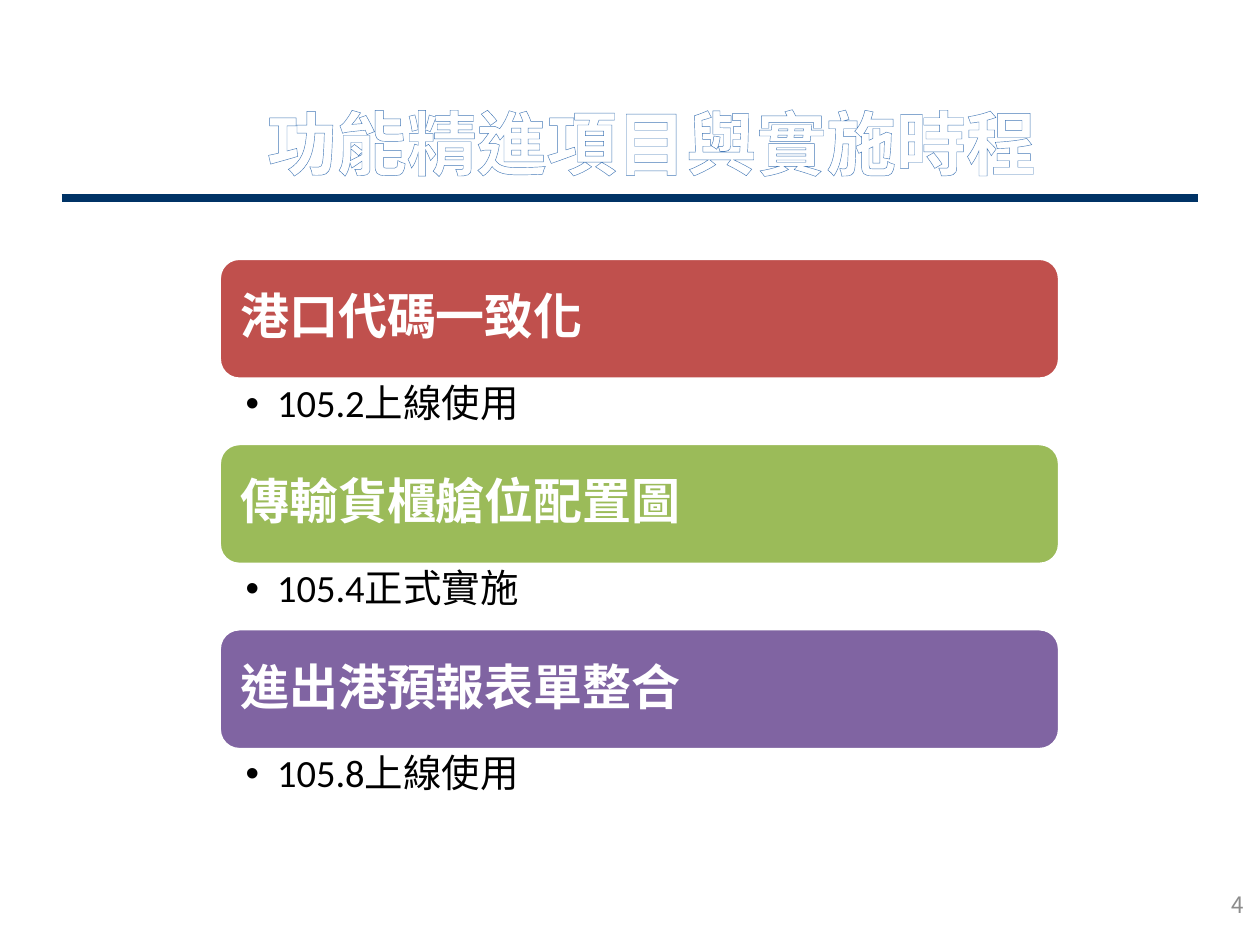
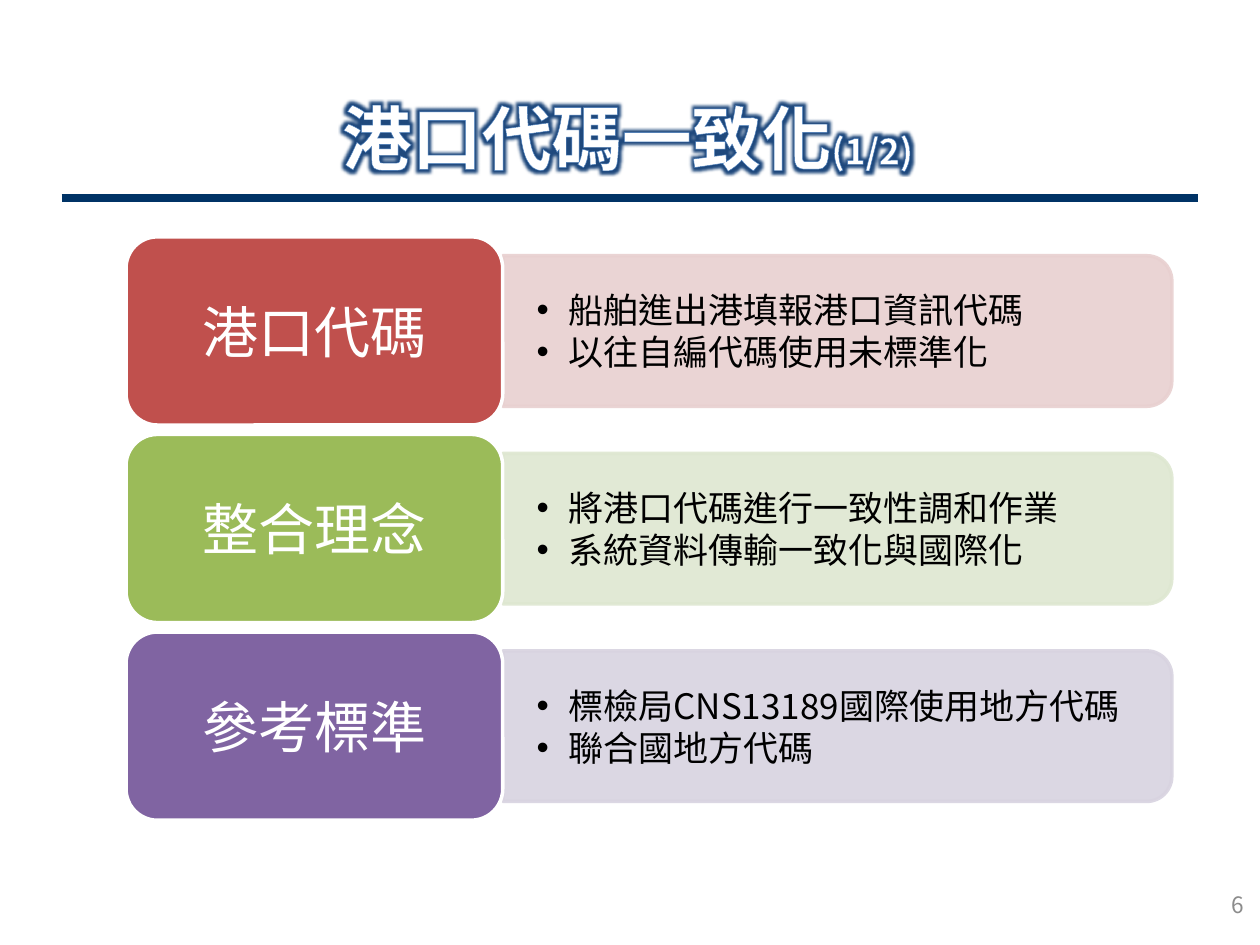
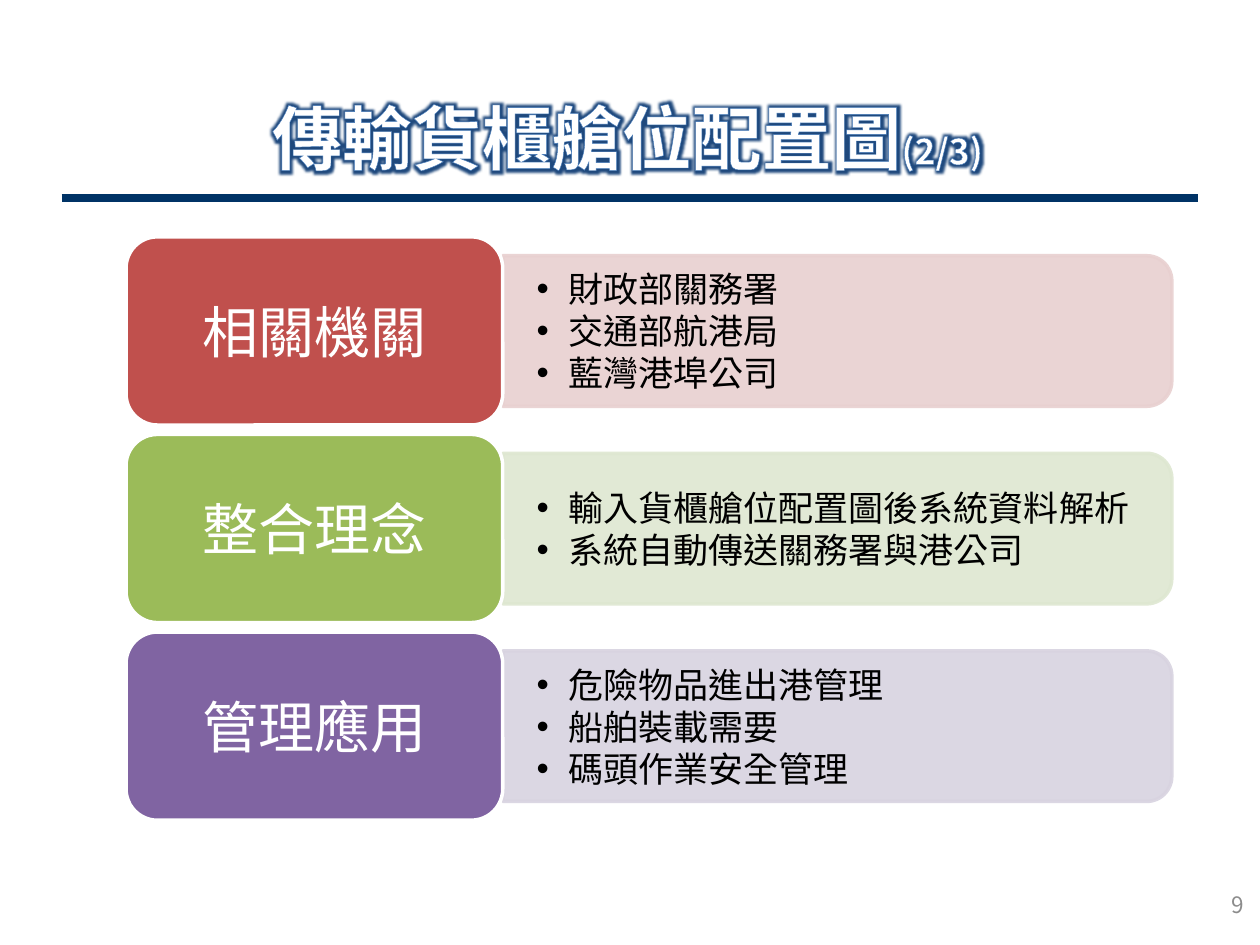
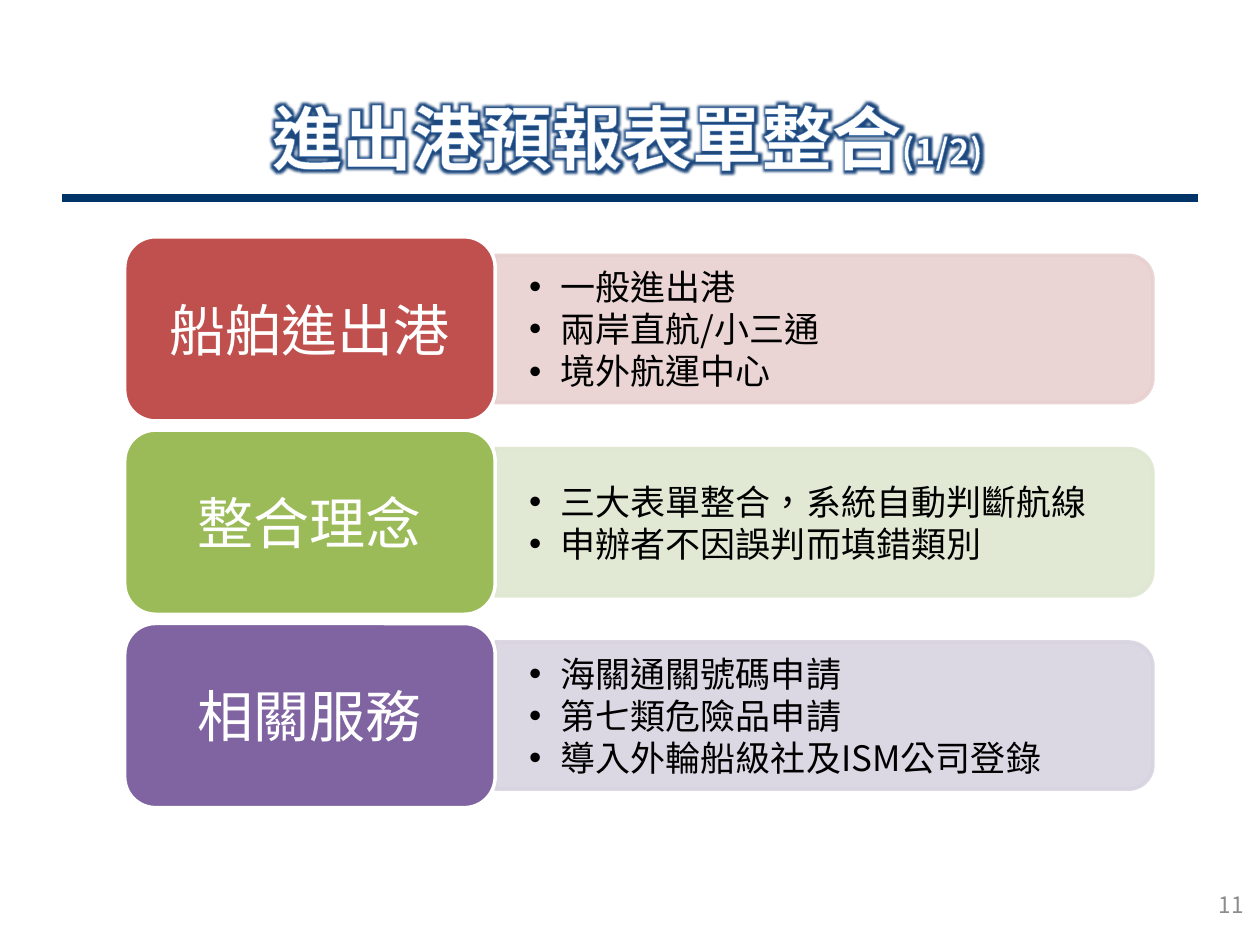
from lxml.etree import SubElement
from pptx import Presentation
from pptx.dml.color import RGBColor
from pptx.enum.shapes import MSO_CONNECTOR, MSO_SHAPE
from pptx.enum.text import MSO_ANCHOR, MSO_AUTO_SIZE, PP_ALIGN
from pptx.oxml import parse_xml
from pptx.oxml.ns import nsdecls, qn
from pptx.util import Pt

PX = 9144
CJK_FONT = "Noto Sans CJK SC"
LATIN_FONT = "Calibri"

WHITE = RGBColor(0xFF, 0xFF, 0xFF)
BLACK = RGBColor(0x00, 0x00, 0x00)
GRAY = RGBColor(0x8C, 0x8C, 0x8C)
NAVY = RGBColor(0x00, 0x33, 0x66)
OUTLINE_BLUE = RGBColor(0x46, 0x7A, 0xB8)
GLOW_BLUE = RGBColor(0x1F, 0x49, 0x7D)
RED = RGBColor(0xC0, 0x50, 0x4D)
GREEN = RGBColor(0x9B, 0xBB, 0x59)
PURPLE = RGBColor(0x80, 0x64, 0xA2)
ACCENTS = [RED, GREEN, PURPLE]
TINTS = [RGBColor(0xE8, 0xD0, 0xD0), RGBColor(0xDE, 0xE7, 0xD1), RGBColor(0xD8, 0xD3, 0xE0)]

SCHEDULE = [
    ("港口代碼一致化", "105.2上線使用"),
    ("傳輸貨櫃艙位配置圖", "105.4正式實施"),
    ("進出港預報表單整合", "105.8上線使用"),
]
PORT_CODES = [
    ("港口代碼", ["船舶進出港填報港口資訊代碼", "以往自編代碼使用未標準化"]),
    ("整合理念", ["將港口代碼進行一致性調和作業", "系統資料傳輸一致化與國際化"]),
    ("參考標準", ["標檢局CNS13189國際使用地方代碼", "聯合國地方代碼"]),
]
BAY_PLANS = [
    ("相關機關", ["財政部關務署", "交通部航港局", "藍灣港埠公司"]),
    ("整合理念", ["輸入貨櫃艙位配置圖後系統資料解析", "系統自動傳送關務署與港公司"]),
    ("管理應用", ["危險物品進出港管理", "船舶裝載需要", "碼頭作業安全管理"]),
]
FORECAST_FORMS = [
    ("船舶進出港", ["一般進出港", "兩岸直航/小三通", "境外航運中心"]),
    ("整合理念", ["三大表單整合，系統自動判斷航線", "申辦者不因誤判而填錯類別"]),
    ("相關服務", ["海關通關號碼申請", "第七類危險品申請", "導入外輪船級社及ISM公司登錄"]),
]


def emu(*lengths):
    return [round(length * PX) for length in lengths]


def style_run(run, size, color, bold=False, latin=CJK_FONT):
    run.font.size = Pt(size)
    run.font.bold = bold
    run.font.color.rgb = color
    run.font.name = latin
    properties = run.font._element
    properties.set("lang", "zh-TW")
    SubElement(properties, qn("a:ea")).set("typeface", CJK_FONT)


def set_frame(frame, insets, anchor):
    frame.word_wrap = True
    frame.auto_size = MSO_AUTO_SIZE.NONE
    frame.vertical_anchor = anchor
    (frame.margin_left, frame.margin_top,
     frame.margin_right, frame.margin_bottom) = emu(*insets)


def add_text(slide, box, insets, anchor):
    frame = slide.shapes.add_textbox(*emu(*box)).text_frame
    set_frame(frame, insets, anchor)
    return frame


def add_bullets(frame, items, size, latin, line_spacing):
    frame.text = "\n".join(items)
    for paragraph in frame.paragraphs:
        paragraph.level = 1
        paragraph.line_spacing = line_spacing
        properties = paragraph._p.get_or_add_pPr()
        properties.set("marL", str(25 * PX))
        properties.set("indent", str(-25 * PX))
        SubElement(properties, qn("a:buFont")).set("typeface", "Arial")
        SubElement(properties, qn("a:buChar")).set("char", "•")
        style_run(paragraph.runs[0], size, BLACK, latin=latin)


def add_block(slide, kind, box, fill, line):
    block = slide.shapes.add_shape(kind, *emu(*box))
    block.shadow.inherit = False
    block.fill.solid()
    block.fill.fore_color.rgb = fill
    block.line.color.rgb = line
    block.line.width = Pt(2)
    return block


def add_label(slide, box, text, accent, size, insets, align, line_spacing, bold=False):
    label = add_block(slide, MSO_SHAPE.ROUNDED_RECTANGLE, box, accent, WHITE)
    set_frame(label.text_frame, insets, MSO_ANCHOR.MIDDLE)
    label.text_frame.text = text
    paragraph = label.text_frame.paragraphs[0]
    paragraph.alignment = align
    paragraph.line_spacing = line_spacing
    style_run(paragraph.runs[0], size, WHITE, bold)


def add_panel(slide, left, top, width, height, items, tint):
    frame_left = left + (width - height) / 2
    frame_top = top + (height - width) / 2
    panel = add_block(slide, MSO_SHAPE.ROUND_2_SAME_RECTANGLE,
                      (frame_left, frame_top, height, width), tint, tint)
    panel.rotation = 90
    for color in panel._element.spPr.iter(qn("a:srgbClr")):
        SubElement(color, qn("a:alpha")).set("val", "90000")
    frame = add_text(slide, (left, top + 6, width - 5, height - 12),
                     (27, 14, 27, 14), MSO_ANCHOR.MIDDLE)
    add_bullets(frame, items, 20, CJK_FONT, Pt(24))


def decorate_title_run(run, glow):
    properties = run.font._element
    properties.insert(0, parse_xml(
        f'<a:ln {nsdecls("a")} w="10541"><a:solidFill>'
        f'<a:srgbClr val="{OUTLINE_BLUE}"/></a:solidFill></a:ln>'))
    if glow:
        properties.insert(2, parse_xml(
            f'<a:effectLst {nsdecls("a")}><a:glow rad="88900">'
            f'<a:srgbClr val="{GLOW_BLUE}"/></a:glow></a:effectLst>'))


def add_title(slide, box, text, part, anchor):
    title = slide.shapes.title
    title.left, title.top, title.width, title.height = emu(*box)
    set_frame(title.text_frame, (10, 5, 10, 5), anchor)
    title.text_frame.text = text
    paragraph = title.text_frame.paragraphs[0]
    paragraph.alignment = PP_ALIGN.CENTER
    paragraph.line_spacing = Pt(48)
    if part:
        paragraph.add_run().text = part
    for run, size in zip(paragraph.runs, (40, 20)):
        style_run(run, size, WHITE, bold=True)
        decorate_title_run(run, glow=bool(part))


def add_page(deck, number):
    slide = deck.slides.add_slide(deck.slide_layouts[5])
    rule = slide.shapes.add_connector(MSO_CONNECTOR.STRAIGHT, *emu(49, 157, 951, 157))
    rule.line.color.rgb = NAVY
    rule.line.width = Pt(4.5)
    SubElement(rule._element.spPr, qn("a:effectLst"))
    footer = add_text(slide, (764, 698, 233, 40), (10, 5, 10, 5), MSO_ANCHOR.MIDDLE)
    footer.text = str(number)
    footer.paragraphs[0].alignment = PP_ALIGN.RIGHT
    style_run(footer.paragraphs[0].runs[0], 12.9, GRAY)
    return slide


def add_schedule(slide):
    left, top, width, label_height, date_height = 174, 205, 667, 96, 51
    for index, ((name, date), accent) in enumerate(zip(SCHEDULE, ACCENTS)):
        label_top = top + index * (label_height + date_height)
        add_label(slide, (left, label_top, width, label_height), name, accent, 28,
                  (12, 12, 12, 12), PP_ALIGN.LEFT, 0.9, bold=True)
        frame = add_text(slide, (left, label_top + label_height, width, date_height),
                         (21, 4, 22, 4), MSO_ANCHOR.TOP)
        add_bullets(frame, [date], 22, LATIN_FONT, 0.9)


def add_topics(slide, topics, left, width, height):
    top = 188
    label_width = round(width * 0.36)
    label_height = height / 3.1
    panel_height = label_height * 0.8
    for index, ((name, items), accent, tint) in enumerate(zip(topics, ACCENTS, TINTS)):
        label_top = top + index * label_height * 1.05
        add_panel(slide, left + label_width, label_top + label_height * 0.1,
                  width - label_width, panel_height, items, tint)
        add_label(slide, (left, label_top, label_width, label_height), name, accent, 32,
                  (13, 7, 13, 7), PP_ALIGN.CENTER, 1.0)


def main():
    deck = Presentation()
    deck.slide_width, deck.slide_height = emu(1000, 750)

    overview = add_page(deck, 4)
    add_title(overview, (67, 53, 900, 119), "功能精進項目與實施時程", "", MSO_ANCHOR.MIDDLE)
    add_schedule(overview)

    topic_pages = [
        (6, "港口代碼一致化", "(1/2)", PORT_CODES, 100, 830, 463),
        (9, "傳輸貨櫃艙位配置圖", "(2/3)", BAY_PLANS, 100, 830, 463),
        (11, "進出港預報表單整合", "(1/2)", FORECAST_FORMS, 99, 816, 453),
    ]
    for number, heading, part, topics, left, width, height in topic_pages:
        slide = add_page(deck, number)
        add_title(slide, (48, 70, 900, 111), heading, part, MSO_ANCHOR.TOP)
        add_topics(slide, topics, left, width, height)

    deck.save("out.pptx")


if __name__ == "__main__":
    main()
